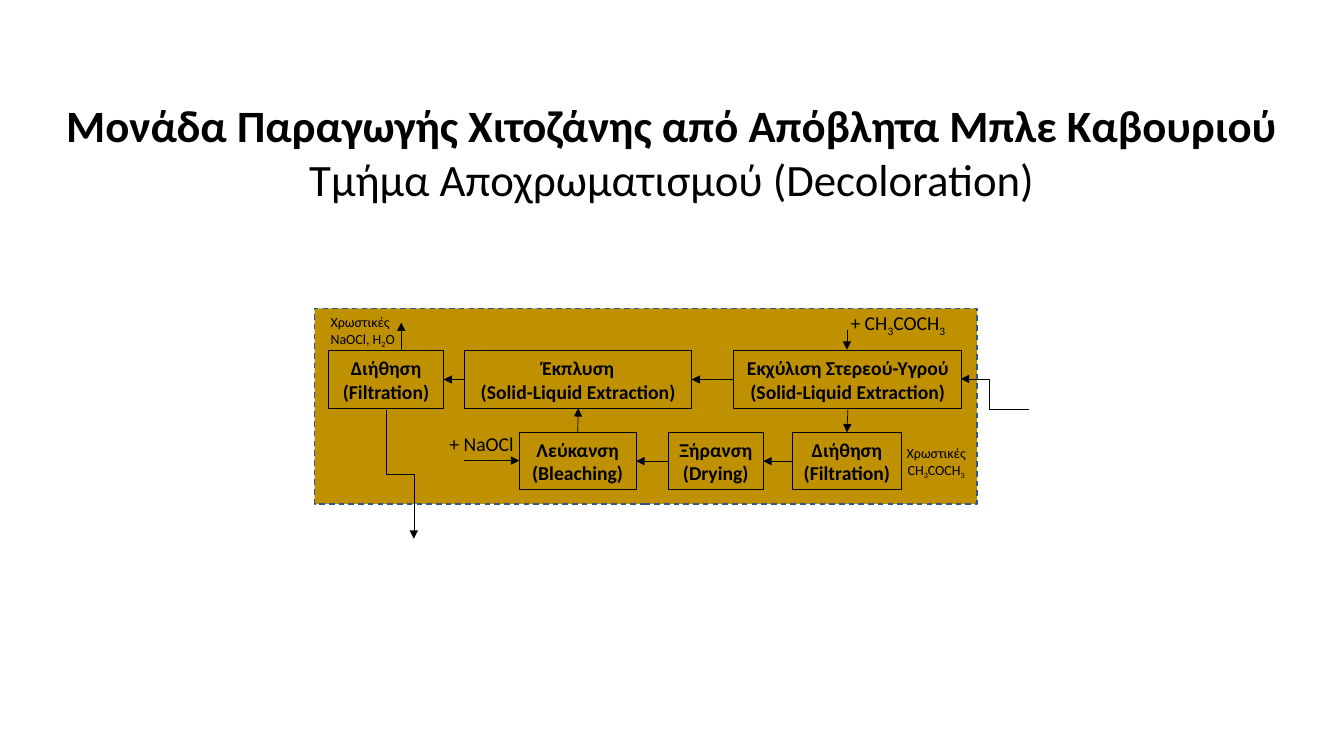
"""Builds the flow diagram slide of the decoloration section."""
from lxml.etree import SubElement
from pptx import Presentation
from pptx.dml.color import RGBColor
from pptx.enum.dml import MSO_LINE
from pptx.enum.shapes import MSO_CONNECTOR as CONN, MSO_SHAPE
from pptx.enum.text import MSO_ANCHOR, MSO_AUTO_SIZE, PP_ALIGN as ALIGN
from pptx.oxml.ns import qn
from pptx.util import Inches, Pt

TITLE = [("Μονάδα Παραγωγής Χιτοζάνης από Απόβλητα Μπλε Καβουριού", True),
         ("Τμήμα Αποχρωματισμού (Decoloration)", False)]

FONT = "Calibri"
BLACK = RGBColor(0x00, 0x00, 0x00)
GOLD = RGBColor(0xBF, 0x90, 0x00)
BLUE = RGBColor(0x32, 0x54, 0x91)

WIDTH, HEIGHT = 13.33, 7.5
SECTION = (3.12, 3.06, 6.57, 1.94)
ROWS, BOX_H = (3.48, 4.29), 0.57
TOP, BOTTOM, LEFT, RIGHT = 0, 2, 1, 3

STEPS = {
    "extraction": (0, 7.28, 2.26, ["Εκχύλιση Στερεού-Υγρού", "(Solid-Liquid Extraction)"]),
    "drain": (1, 7.86, 1.08, ["Διήθηση (Filtration)"]),
    "drying": (1, 6.63, 0.94, ["Ξήρανση", "(Drying)"]),
    "bleaching": (1, 5.15, 1.16, ["Λεύκανση", "(Bleaching)"]),
    "rinsing": (0, 4.61, 2.25, ["Έκπλυση", "(Solid-Liquid Extraction)"]),
    "filtration": (0, 3.26, 1.14, ["Διήθηση (Filtration)"]),
}
FLOWS = [
    ("extraction", BOTTOM, "drain", TOP),
    ("drain", LEFT, "drying", RIGHT),
    ("drying", LEFT, "bleaching", RIGHT),
    ("bleaching", TOP, "rinsing", BOTTOM),
    ("rinsing", LEFT, "filtration", RIGHT),
    ("extraction", LEFT, "rinsing", RIGHT),
]
STREAMS = [(8.4, 3.27, 8.4, 3.47), (3.98, 3.48, 3.98, 3.2), (4.6, 4.57, 5.15, 4.57)]
FEED = (10.21, 4.06, 9.53, 3.76)
PRODUCT = (4.61, 4.57, 3.33, 4.84)

# Every second run of a label line is a subscript.
LABELS = [
    ((8.28, 3.04, 1.25, 0.34), 14, ALIGN.CENTER, [["+ CH", "3", "COCH", "3"]]),
    ((3.18, 3.06, 0.91, 0.44), 10, ALIGN.LEFT, [["Χρωστικές"], ["NaOCl, H", "2", "O"]]),
    ((8.79, 4.36, 0.99, 0.44), 10, ALIGN.CENTER, [["Χρωστικές"], ["CH", "3", "COCH", "3"]]),
    ((4.36, 4.24, 1.13, 0.34), 14, ALIGN.LEFT, [["+ NaOCl"]]),
]


def inches(values):
    return [Inches(v) for v in values]


def write(tf, lines, size, align, bold=False):
    tf.word_wrap = True
    for i, runs in enumerate(lines):
        p = tf.paragraphs[0] if i == 0 else tf.add_paragraph()
        p.alignment = align
        p.font.name, p.font.size, p.font.bold = FONT, Pt(size), bold
        p.font.color.rgb = BLACK
        for j, text in enumerate(runs):
            r = p.add_run()
            r.text = text
            if j % 2:
                r.font.size = Pt(size)
                r.font._element.set("baseline", "-25000")


def add_rect(shapes, box):
    sp = shapes.add_shape(MSO_SHAPE.RECTANGLE, *inches(box))
    sp.shadow.inherit = False
    return sp


def add_arrow(shapes, ends, kind=CONN.STRAIGHT):
    c = shapes.add_connector(kind, *inches(ends))
    c.line.color.rgb = BLACK
    c.line.width = Pt(0.5)
    SubElement(c.line._get_or_add_ln(), qn("a:tailEnd"), type="triangle")
    SubElement(c._element.spPr, qn("a:effectLst"))
    return c


def main():
    prs = Presentation()
    prs.slide_width, prs.slide_height = inches((WIDTH, HEIGHT))
    slide = prs.slides.add_slide(prs.slide_layouts[5])
    shapes = slide.shapes

    title = shapes.title
    title.left, title.top, title.width, title.height = inches((0, 0.92, WIDTH, 1.18))
    tf = title.text_frame
    tf.auto_size = MSO_AUTO_SIZE.NONE
    tf.vertical_anchor = MSO_ANCHOR.TOP
    write(tf, [[text] for text, _ in TITLE], 32, ALIGN.CENTER)
    for p, (_, bold) in zip(tf.paragraphs, TITLE):
        p.font.bold = bold

    section = add_rect(shapes, SECTION)
    section.fill.solid()
    section.fill.fore_color.rgb = GOLD
    section.line.color.rgb = BLUE
    section.line.width = Pt(1)
    section.line.dash_style = MSO_LINE.DASH

    boxes = {}
    for name, (row, left, width, lines) in STEPS.items():
        sp = boxes[name] = add_rect(shapes, (left, ROWS[row], width, BOX_H))
        sp.fill.background()
        sp.line.color.rgb = BLACK
        sp.line.width = Pt(0.75)
        tf = sp.text_frame
        tf.margin_left = tf.margin_right = Inches(0.05)
        tf.vertical_anchor = MSO_ANCHOR.MIDDLE
        write(tf, [[line] for line in lines], 14, ALIGN.CENTER, True)

    for source, out_side, target, in_side in FLOWS:
        c = add_arrow(shapes, (0, 0, 1, 1))
        c.begin_connect(boxes[source], out_side)
        c.end_connect(boxes[target], in_side)
    for ends in STREAMS:
        add_arrow(shapes, ends)

    feed = add_arrow(shapes, FEED, CONN.ELBOW)
    guides = feed._element.spPr.find(qn("a:prstGeom")).find(qn("a:avLst"))
    SubElement(guides, qn("a:gd"), name="adj1", fmla="val 57700")
    product = add_arrow(shapes, PRODUCT, CONN.ELBOW)
    product._element.spPr.find(qn("a:xfrm")).set("rot", str(270 * 60000))

    for box, size, align, lines in LABELS:
        write(shapes.add_textbox(*inches(box)).text_frame, lines, size, align)

    prs.save("out.pptx")


if __name__ == "__main__":
    main()
